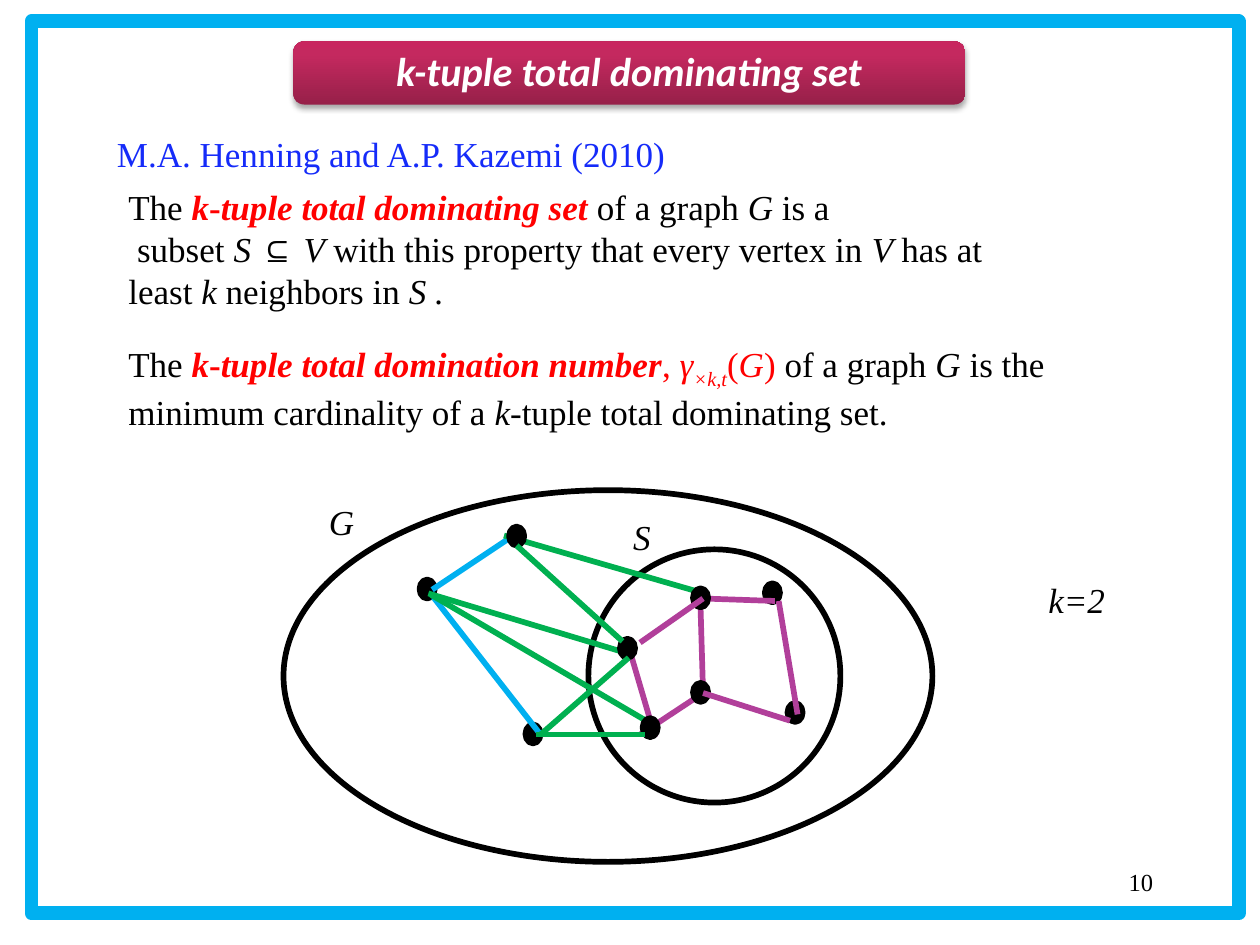
from copy import deepcopy

from lxml.etree import SubElement
from pptx import Presentation
from pptx.dml.color import RGBColor
from pptx.enum.shapes import MSO_CONNECTOR, MSO_SHAPE
from pptx.enum.text import MSO_ANCHOR, PP_ALIGN
from pptx.oxml import parse_xml
from pptx.oxml.ns import nsdecls, qn
from pptx.util import Cm, Pt

BLACK = RGBColor(0x00, 0x00, 0x00)
WHITE = RGBColor(0xFF, 0xFF, 0xFF)
RED = RGBColor(0xFF, 0x00, 0x00)
BLUE = RGBColor(0x15, 0x2B, 0xF9)
SKY = RGBColor(0x00, 0xB0, 0xF0)
GREEN = RGBColor(0x00, 0xB0, 0x50)
PURPLE = RGBColor(0xB1, 0x3F, 0x9A)
TITLE_STOPS = [(0, RGBColor(0x97, 0x20, 0x49)), (0.8, RGBColor(0xC4, 0x29, 0x5F)),
               (1, RGBColor(0xC8, 0x26, 0x5F))]
SERIF = "Times New Roman"
STROKE = 3.25
VERTEX_SIZE = (0.12, 0.15)

# Runs are (text, style): b bold, i italic, r red, s subscript.
TITLE = ("k-tuple total dominating set", "bi")
SET_DEFINITION = [
    [("The ", ""), ("k", "bir"), ("-", "br"), ("tuple total dominating set ", "bir"),
     ("of a graph ", ""), ("G ", "i"), ("is a", "")],
    [(" subset ", ""), ("S ⊆ V ", "i"), ("with this property that every vertex in ", ""),
     ("V ", "i"), ("has at", "")],
    [("least ", ""), ("k ", "i"), ("neighbors in ", ""), ("S .", "i")],
]
NUMBER_DEFINITION = [
    [("The ", ""), ("k", "bir"), ("-", "br"), ("tuple total domination number", "bir"),
     (", ", "r"), ("γ", "ir"), ("×k,t", "irs"), ("(", "r"), ("G", "ir"), (") ", "r"),
     ("of a graph ", ""), ("G ", "i"), ("is the minimum cardinality of a ", ""),
     ("k", "i"), ("-tuple total dominating set.", "")],
]
# Boxes in inches: left, top, width, height
TEXTS = [
    ((0.83, 1, 7.75, 0.44), [[("M.A. Henning and A.P. Kazemi (2010)", "")]],
     PP_ALIGN.LEFT, 20, BLUE),
    ((0.92, 1.42, 7.92, 1.11), SET_DEFINITION, PP_ALIGN.LEFT, 20, BLACK),
    ((0.92, 2.67, 7.75, 0.77), NUMBER_DEFINITION, PP_ALIGN.LEFT, 20, BLACK),
    ((2.42, 3.92, 0.58, 0.44), [[("G", "i")]], PP_ALIGN.CENTER, 20, BLACK),
    ((4.76, 4.04, 0.67, 0.44), [[("S", "i")]], PP_ALIGN.CENTER, 20, BLACK),
    ((8.17, 4.54, 0.75, 0.44), [[("k=2", "i")]], PP_ALIGN.CENTER, 20, BLACK),
    ((7.17, 6.83, 2.08, 0.5), [[("10", "")]], PP_ALIGN.RIGHT, 14, BLACK),
]
OUTLINES = [
    (MSO_SHAPE.RECTANGLE, (0.25, 0.17, 9.58, 7.08), SKY, 8),
    (MSO_SHAPE.OVAL, (2.25, 3.89, 5.15, 2.95), BLACK, STROKE),
    (MSO_SHAPE.OVAL, (4.67, 4.36, 2, 2.01), BLACK, STROKE),
]
# Graph layers from back to front
BACK_VERTICES = [(3.33, 4.6), (4.17, 5.75), (6.07, 4.63)]
BACK_EDGES = [
    (SKY, (3.44, 4.74), (4.29, 5.83)),
    (SKY, (3.43, 4.68), (4.15, 4.2)),
    (GREEN, (4, 4.25), (5.52, 4.69)),
    (GREEN, (3.42, 4.72), (5.23, 5.78)),
    (GREEN, (3.4, 4.71), (5.03, 5.2)),
    (PURPLE, (5.58, 5.5), (5.56, 4.82)),
    (PURPLE, (5.2, 5.85), (5, 5.17)),
    (PURPLE, (5.58, 4.75), (6.15, 4.77)),
    (PURPLE, (5.08, 5.83), (5.58, 5.5)),
]
FRONT_VERTICES = [(4.92, 5.07), (5.1, 5.7), (5.5, 5.42), (6.25, 5.58), (5.5, 4.67), (4.04, 4.18)]
FRONT_EDGES = [
    (PURPLE, (5.58, 5.5), (6.27, 5.72)),
    (PURPLE, (6.33, 5.67), (6.18, 4.77)),
    (PURPLE, (5.58, 4.75), (5.08, 5.1)),
    (GREEN, (4.25, 5.83), (5.12, 5.83)),
    (GREEN, (4.1, 4.33), (4.94, 5.09)),
    (GREEN, (4.29, 5.83), (4.99, 5.22)),
]


def lengths(values):
    """Turn inches into Cm lengths."""
    return [Cm(v * 2.54) for v in values]


def add_run(p, text, style, size, color, font=SERIF):
    r = p.add_run()
    r.text = text
    r.font.name, r.font.size = font, Pt(size)
    r.font.bold, r.font.italic = "b" in style, "i" in style
    r.font.color.rgb = RED if "r" in style else color
    if "s" in style:
        r.font._element.set("baseline", "-25000")


def add_text(s, box, paragraphs, align, size, color):
    tf = s.shapes.add_textbox(*lengths(box)).text_frame
    tf.word_wrap = True
    for i, runs in enumerate(paragraphs):
        p = tf.add_paragraph() if i else tf.paragraphs[0]
        p.alignment = align
        for text, style in runs:
            add_run(p, text, style, size, color)


def add_outline(s, kind, box, color, width):
    sp = s.shapes.add_shape(kind, *lengths(box))
    sp.shadow.inherit = False
    sp.fill.background()
    sp.line.color.rgb, sp.line.width = color, Pt(width)
    return sp


def add_vertices(s, corners):
    for corner in corners:
        sp = add_outline(s, MSO_SHAPE.OVAL, corner + VERTEX_SIZE, BLACK, STROKE)
        sp.fill.solid()
        sp.fill.fore_color.rgb = BLACK


def add_edges(s, edges):
    for color, start, end in edges:
        line = s.shapes.add_connector(MSO_CONNECTOR.STRAIGHT, *lengths(start + end))
        line.line.color.rgb, line.line.width = color, Pt(STROKE)
        SubElement(line._element.spPr, qn("a:effectLst"))


def add_title(s):
    sp = s.shapes.add_shape(MSO_SHAPE.ROUNDED_RECTANGLE, *lengths((2.33, 0.33, 5.33, 0.5)))
    sp.line.fill.background()
    sp.fill.gradient()
    sp.fill.gradient_angle = 90
    stop_list = sp._element.spPr.find(".//" + qn("a:gsLst"))
    stop_list.append(deepcopy(stop_list[-1]))
    for stop, (position, color) in zip(sp.fill.gradient_stops, TITLE_STOPS):
        stop.position, stop.color.rgb = position, color
    sp._element.spPr.append(parse_xml(
        f'<a:effectLst {nsdecls("a")}>'
        f'<a:outerShdw blurRad="{Pt(3.1)}" dist="{Pt(1.8)}" dir="5400000" rotWithShape="0">'
        '<a:srgbClr val="000000"><a:alpha val="35000"/></a:srgbClr>'
        '</a:outerShdw></a:effectLst>'))
    tf = sp.text_frame
    tf.vertical_anchor = MSO_ANCHOR.MIDDLE
    p = tf.paragraphs[0]
    p.alignment, p.line_spacing = PP_ALIGN.CENTER, 0.9
    add_run(p, *TITLE, 23, WHITE, "Calibri")


def main():
    prs = Presentation()
    prs.slide_width, prs.slide_height = lengths((10, 7.5))
    s = prs.slides.add_slide(prs.slide_layouts[6])
    for outline in OUTLINES:
        add_outline(s, *outline)
    add_vertices(s, BACK_VERTICES)
    add_edges(s, BACK_EDGES)
    add_vertices(s, FRONT_VERTICES)
    add_edges(s, FRONT_EDGES)
    add_title(s)
    for text in TEXTS:
        add_text(s, *text)
    prs.save("out.pptx")


if __name__ == "__main__":
    main()
